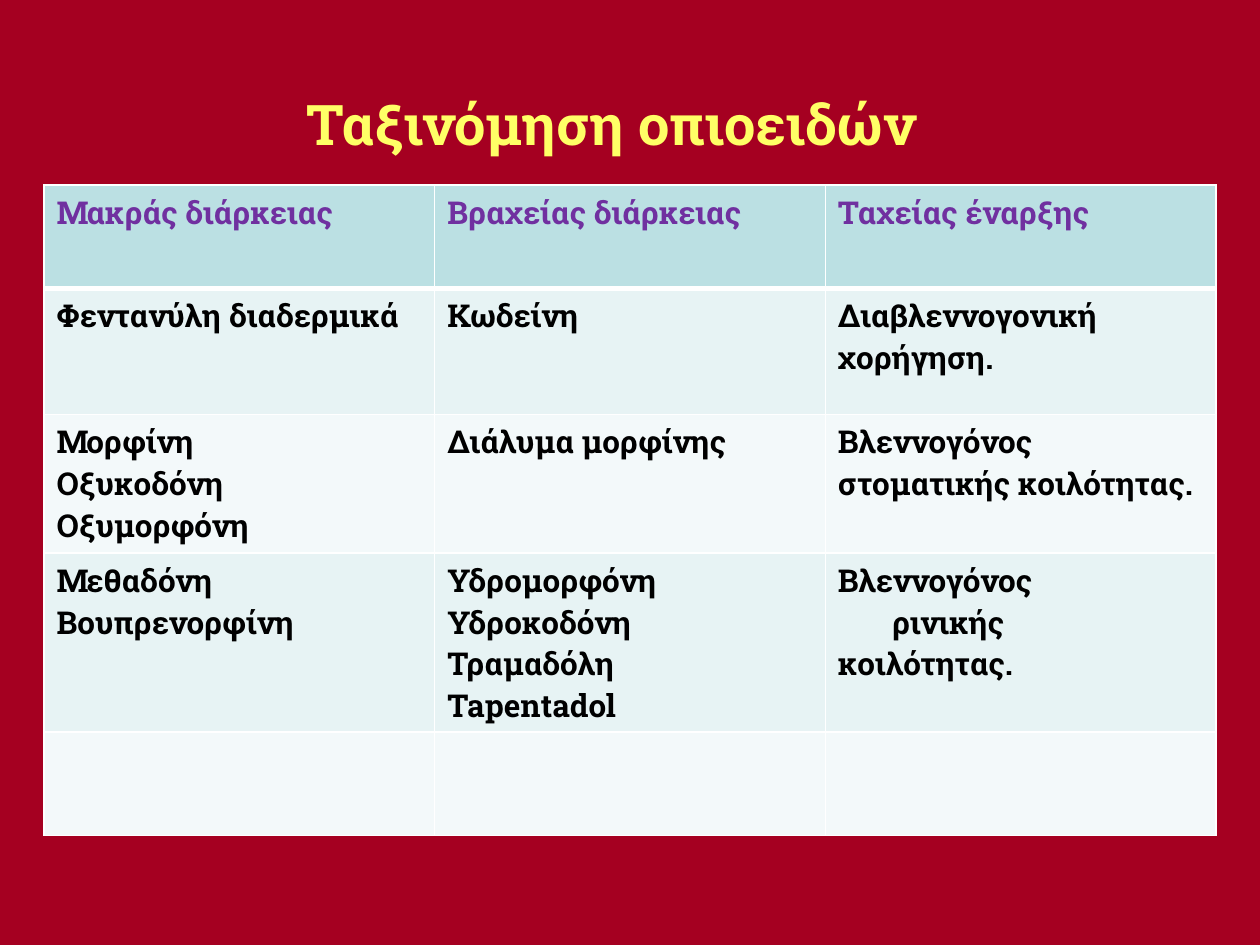
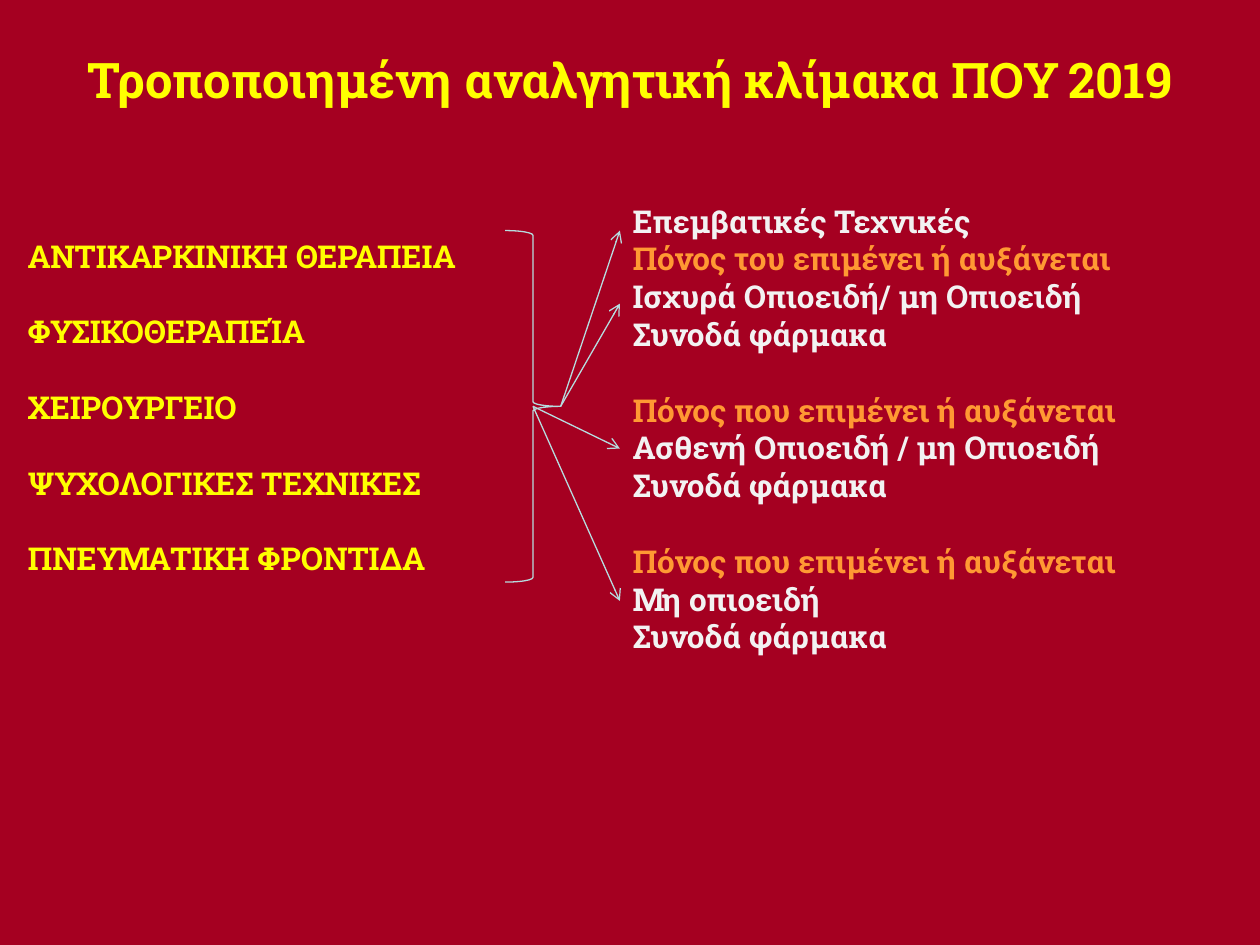
from lxml import etree
from pptx import Presentation
from pptx.dml.color import RGBColor
from pptx.enum.shapes import MSO_CONNECTOR as Connector, MSO_SHAPE as Shape
from pptx.enum.text import MSO_ANCHOR as Anchor, MSO_AUTO_SIZE as AutoSize, PP_ALIGN as Align
from pptx.oxml import parse_xml
from pptx.oxml.ns import nsdecls, qn
from pptx.util import Inches, Pt

# Shared look
FONT = "Roboto Slab"
BODY_SIZE = 18
LINE_PITCH = 21.6
BACK, YELLOW, ORANGE, PALE = "A50021", "FFFF00", "FF9933", "F2F2F2"
WHITE, BLACK, PURPLE, LINE = "FFFFFF", "000000", "7030A0", "B6DCDF"
HEADER_FILL, BAND_FILLS = "BBE0E3", ("E7F3F4", "F3F9FA")

# Slide 1: each cell is a list of paragraphs; a tuple is (text, indent in inches)
OPIOID_TITLE = "Ταξινόμηση οπιοειδών"
OPIOID_ROWS = [
    (0.82, [["Μακράς διάρκειας"], ["Βραχείας διάρκειας"], ["Ταχείας έναρξης"]]),
    (1, [["Φεντανύλη διαδερμικά"], ["Κωδείνη"], ["Διαβλεννογονική χορήγηση."]]),
    (1.1, [["Μορφίνη", "Oξυκοδόνη Oξυμορφόνη"], ["Διάλυμα μορφίνης"],
           ["Βλεννογόνος στοματικής κοιλότητας."]]),
    (1.42, [["Μεθαδόνη", "Bουπρενορφίνη"],
            ["Υδρομορφόνη", "Υδροκοδόνη", "Τραμαδόλη", "Tapentadol"],
            ["Βλεννογόνος", ("ρινικής", 0.43), "κοιλότητας."]]),
    (0.82, [[], [], []]),
]

# Slide 2: blocks of (text, colour) lines, with one line of space between blocks
LADDER_TITLE = "Τροποποιημένη αναλγητική κλίμακα ΠΟΥ 2019"
THERAPIES = [[(name, YELLOW)] for name in (
    "ΑΝΤΙΚΑΡΚΙΝΙΚΗ ΘΕΡΑΠΕΙΑ", "ΦΥΣΙΚΟΘΕΡΑΠΕΊΑ", "ΧΕΙΡΟΥΡΓΕΙΟ",
    "ΨΥΧΟΛΟΓΙΚΕΣ ΤΕΧΝΙΚΕΣ", "ΠΝΕΥΜΑΤΙΚΗ ΦΡΟΝΤΙΔΑ")]
PAIN_STAYS = ("Πόνος που επιμένει ή αυξάνεται", ORANGE)
ADJUVANTS = ("Συνοδά φάρμακα", PALE)
LADDER_STEPS = [
    [("Επεμβατικές Τεχνικές", PALE), ("Πόνος του επιμένει ή αυξάνεται", ORANGE),
     ("Ισχυρά Οπιοειδή/ μη Οπιοειδή", PALE), ADJUVANTS],
    [PAIN_STAYS, ("Ασθενή Οπιοειδή / μη Οπιοειδή", PALE), ADJUVANTS],
    [PAIN_STAYS, ("Μη οπιοειδή", PALE), ADJUVANTS],
]
BRACE = (4.01, 1.83, 0.44, 2.79)
STEPS_LEFT = 4.92
# Arrows: share of the brace's width where each starts, height where it ends
ARROWS = [(1, 1.83), (1, 2.41), (0.5, 3.56), (0.5, 4.77)]


def rgb(value):
    return RGBColor.from_string(value)


def place(shape, left, top, width, height):
    shape.left, shape.top = Inches(left), Inches(top)
    shape.width, shape.height = Inches(width), Inches(height)


def add_run(para, text, size, color):
    span = para.add_run()
    span.text = text
    span.font.name, span.font.size, span.font.bold = FONT, Pt(size), True
    span.font.color.rgb = rgb(color)


def next_para(frame, index):
    return frame.add_paragraph() if index else frame.paragraphs[0]


def set_title(page, text, size, color, bounds):
    title = page.shapes.title
    place(title, *bounds)
    frame = title.text_frame
    frame.vertical_anchor, frame.auto_size = Anchor.MIDDLE, AutoSize.NONE
    para = frame.paragraphs[0]
    para.alignment = Align.CENTER
    add_run(para, text, size, color)


def fill_list(box, blocks, bounds):
    place(box, *bounds)
    frame = box.text_frame
    frame.word_wrap, frame.auto_size = True, AutoSize.NONE
    lines = [(line, block_no and line_no == 0) for block_no, block in enumerate(blocks)
             for line_no, line in enumerate(block)]
    for index, ((text, color), opens_block) in enumerate(lines):
        para = next_para(frame, index)
        props = para._p.get_or_add_pPr()
        props.set("marL", "0")
        props.set("indent", "0")
        etree.SubElement(props, qn("a:buNone"))
        para.line_spacing = Pt(LINE_PITCH)
        para.space_before = Pt(LINE_PITCH if opens_block else 0)
        add_run(para, text, BODY_SIZE, color)


def set_borders(cell, top, bottom):
    props = cell._tc.get_or_add_tcPr()
    sides = (("lnL", 1), ("lnR", 1), ("lnT", top), ("lnB", bottom))
    for position, (side, width) in enumerate(sides):
        props.insert(position, parse_xml(
            f'<a:{side} {nsdecls("a")} w="{Pt(width)}"><a:solidFill>'
            f'<a:srgbClr val="{WHITE}"/></a:solidFill></a:{side}>'))


def fill_cell(cell, paragraphs, color, fill):
    cell.fill.solid()
    cell.fill.fore_color.rgb = rgb(fill)
    for index, item in enumerate(paragraphs):
        text, indent = item if isinstance(item, tuple) else (item, 0)
        para = next_para(cell.text_frame, index)
        if indent:
            para._p.get_or_add_pPr().set("marL", str(Inches(indent)))
        add_run(para, text, BODY_SIZE, color)


def add_arrow(page, start, end):
    arrow = page.shapes.add_connector(
        Connector.STRAIGHT, *(Inches(value) for value in start + end))
    arrow.line.color.rgb = rgb(LINE)
    arrow.line.width = Pt(0.75)
    etree.SubElement(arrow.line._get_or_add_ln(), qn("a:tailEnd")).set("type", "arrow")
    etree.SubElement(arrow._element.spPr, qn("a:effectLst"))


def build_opioid_table(deck):
    page = deck.slides.add_slide(deck.slide_layouts.get_by_name("Title Only"))
    set_title(page, OPIOID_TITLE, 32, "FFFF66", (0.35, 0.52, 9, 0.91))
    height = sum(row_height for row_height, _ in OPIOID_ROWS)
    table = page.shapes.add_table(
        len(OPIOID_ROWS), 3, Inches(0.35), Inches(1.47), Inches(9.3), Inches(height)).table
    for row_no, (row_height, cells) in enumerate(OPIOID_ROWS):
        table.rows[row_no].height = Inches(row_height)
        header = row_no == 0
        fill = HEADER_FILL if header else BAND_FILLS[(row_no - 1) % 2]
        for col_no, paragraphs in enumerate(cells):
            cell = table.cell(row_no, col_no)
            fill_cell(cell, paragraphs, PURPLE if header else BLACK, fill)
            set_borders(cell, top=3 if row_no == 1 else 1, bottom=3 if header else 1)


def build_pain_ladder(deck):
    page = deck.slides.add_slide(deck.slide_layouts.get_by_name("Two Content"))
    set_title(page, LADDER_TITLE, 28, YELLOW, (0, 0, 10, 1.25))
    fill_list(page.placeholders[1], THERAPIES, (0.12, 1.83, 3.89, 3.13))
    fill_list(page.placeholders[2], LADDER_STEPS, (STEPS_LEFT, 1.55, 4.52, 4.04))

    # Brace that gathers the therapies
    left, top, width, height = BRACE
    brace = page.shapes.add_shape(Shape.RIGHT_BRACE, *(Inches(value) for value in BRACE))
    brace.shadow.inherit = False
    brace.fill.background()
    brace.line.color.rgb = rgb(LINE)
    brace.line.width = Pt(0.75)

    # Arrows to the steps
    for share, end_y in ARROWS:
        add_arrow(page, (left + share * width, top + height / 2), (STEPS_LEFT, end_y))


def main():
    deck = Presentation()
    deck.slide_width, deck.slide_height = Inches(10), Inches(7.5)
    backdrop = deck.slide_master.background.fill
    backdrop.solid()
    backdrop.fore_color.rgb = rgb(BACK)
    build_opioid_table(deck)
    build_pain_ladder(deck)
    deck.save("out.pptx")


if __name__ == "__main__":
    main()
